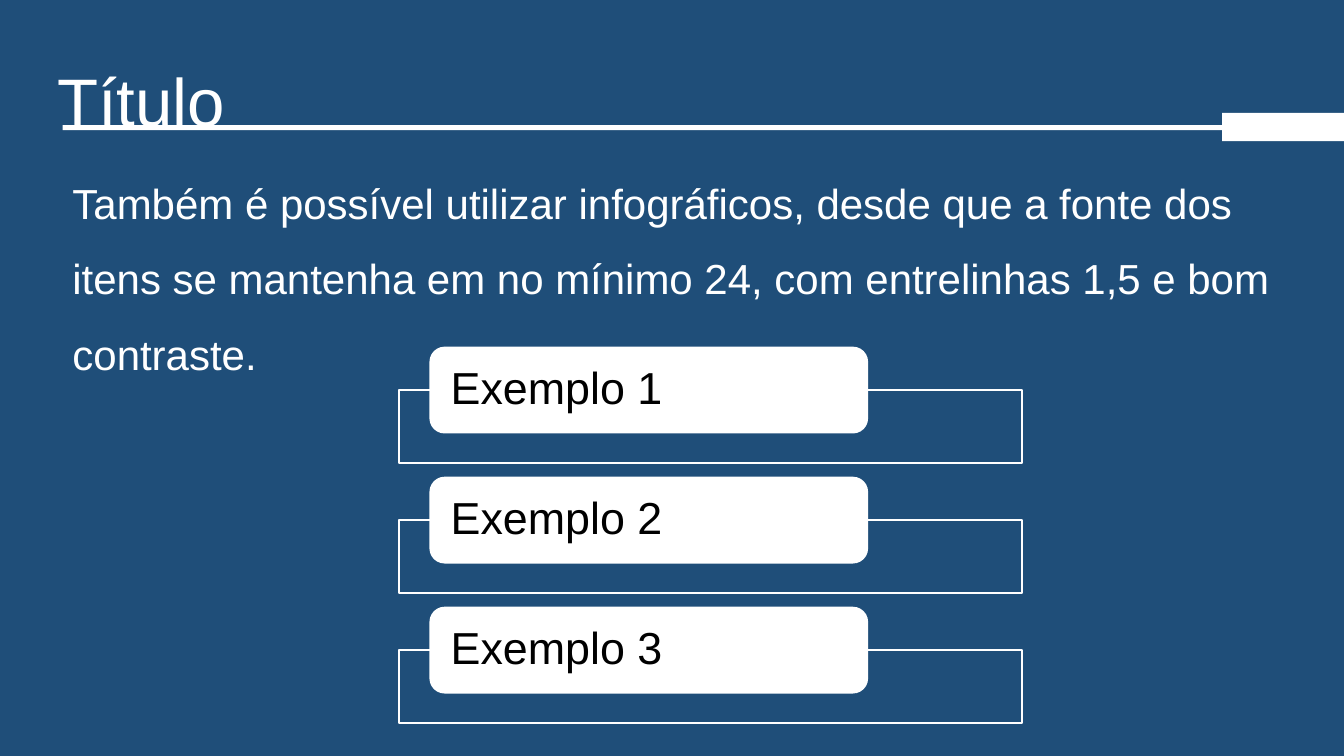
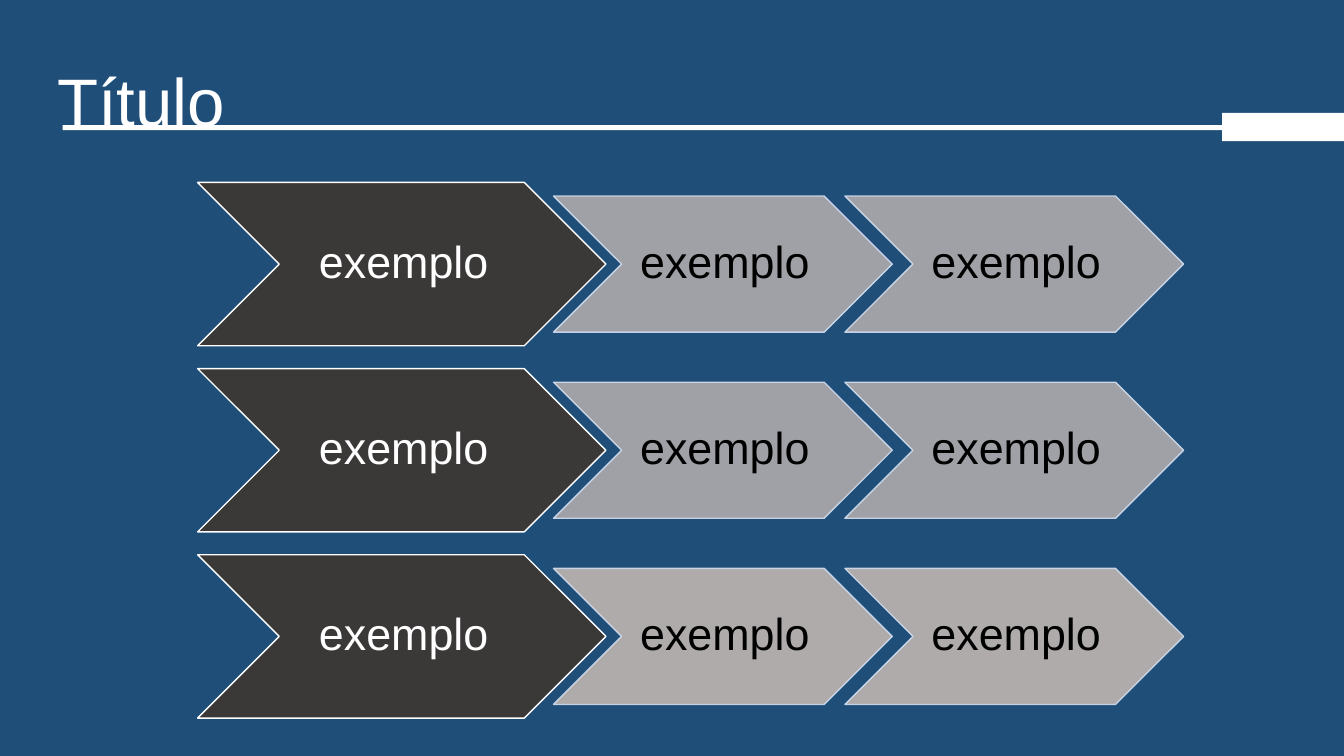
from dataclasses import dataclass, replace

import lxml.etree
import pptx
import pptx.dml.color
import pptx.enum.shapes
import pptx.enum.text
import pptx.oxml.ns
import pptx.presentation
import pptx.shapes.autoshape
import pptx.slide
import pptx.text.text
import pptx.util

Inches = pptx.util.Inches
Pt = pptx.util.Pt
KIND = pptx.enum.shapes.MSO_SHAPE
ALIGN = pptx.enum.text.PP_ALIGN
ANCHOR = pptx.enum.text.MSO_ANCHOR

WIDE, HIGH = 13.33, 7.5
FONT = "Arial"
NAVY = "1F4E79"
WHITE = "FFFFFF"
BLACK = "000000"
DARK = "3B3838"
GREY = "AFABAB"
PALE = "D2DEEF"


@dataclass(frozen=True)
class Box:
    left: float
    top: float
    width: float
    height: float


@dataclass(frozen=True)
class Look:
    kind: int
    fill: str | None = None
    line: str | None = None
    weight: float = 1
    fill_alpha: int = 100
    line_alpha: int = 100


@dataclass(frozen=True)
class Type:
    size: float
    ink: str
    space: float
    align: int = ALIGN.LEFT
    anchor: int = ANCHOR.TOP
    inset: tuple[float, float, float, float] = (0.1, 0.05, 0.1, 0.05)
    before: float = 0


HEAD = Type(48, WHITE, 1.5)
BODY = Type(30, WHITE, 1.5, before=10)
LABEL = Type(32, BLACK, 0.9, anchor=ANCHOR.MIDDLE, inset=(0.16, 0, 0.16, 0))
STEP = Type(32, BLACK, 0.9, ALIGN.CENTER, ANCHOR.MIDDLE, (0.04, 0.02, 0, 0.02))
LEAD = replace(STEP, ink=WHITE)

BAR = Look(KIND.RECTANGLE, WHITE)
FRAME = Look(KIND.RECTANGLE, line=WHITE, weight=1.5)
TAB = Look(KIND.ROUNDED_RECTANGLE, WHITE, WHITE, 1.5)
FIRST = Look(KIND.CHEVRON, DARK, WHITE)
NEXT = Look(KIND.CHEVRON, GREY, PALE, fill_alpha=90, line_alpha=90)
LAST = replace(NEXT, fill_alpha=100)


def paint(fill: pptx.dml.fill.FillFormat, color: str | None, alpha: int = 100) -> None:
    if color is None:
        fill.background()
        return
    fill.solid()
    fill.fore_color.rgb = pptx.dml.color.RGBColor.from_string(color)
    if alpha < 100:
        node = fill._xPr.find(".//" + pptx.oxml.ns.qn("a:srgbClr"))
        lxml.etree.SubElement(node, pptx.oxml.ns.qn("a:alpha"), val=str(alpha * 1000))


def write(frame: pptx.text.text.TextFrame, text: str, style: Type) -> None:
    frame.text = text
    frame.word_wrap = True
    frame.vertical_anchor = style.anchor
    (frame.margin_left, frame.margin_top,
     frame.margin_right, frame.margin_bottom) = map(Inches, style.inset)
    for para in frame.paragraphs:
        para.alignment = style.align
        para.line_spacing = style.space
        para.space_before = Pt(style.before)
        for run in para.runs:
            run.font.name = FONT
            run.font.size = Pt(style.size)
            paint(run.font.fill, style.ink)


def place(box: Box) -> tuple[int, int, int, int]:
    return Inches(box.left), Inches(box.top), Inches(box.width), Inches(box.height)


def draw(slide: pptx.slide.Slide, box: Box, look: Look) -> pptx.shapes.autoshape.Shape:
    shape = slide.shapes.add_shape(look.kind, *place(box))
    shape.shadow.inherit = False
    paint(shape.fill, look.fill, look.fill_alpha)
    paint(shape.line.fill, look.line, look.line_alpha)
    if look.line:
        shape.line.width = Pt(look.weight)
    return shape


def note(slide: pptx.slide.Slide, box: Box, text: str, style: Type) -> None:
    write(slide.shapes.add_textbox(*place(box)).text_frame, text, style)


def start(deck: pptx.presentation.Presentation) -> pptx.slide.Slide:
    slide = deck.slides.add_slide(deck.slide_layouts[6])
    paint(slide.background.fill, NAVY)
    return slide


def crown(slide: pptx.slide.Slide, title: str) -> None:
    note(slide, Box(0.47, 0.14, 10, 1.03), title, HEAD)
    draw(slide, Box(0.62, 1.24, 12.71, 0.05), BAR)
    draw(slide, Box(12.12, 1.12, 1.21, 0.28), BAR)


def add_list(deck: pptx.presentation.Presentation) -> None:
    slide = start(deck)
    note(slide, Box(0.62, 1.46, 12.47, 5.32),
         "Também é possível utilizar infográficos, desde que a fonte dos itens "
         "se mantenha em no mínimo 24, com entrelinhas 1,5 e bom contraste.", BODY)
    for row in range(3):
        top = 3.45 + row * 1.29
        draw(slide, Box(3.96, top + 0.42, 6.18, 0.72), FRAME)
        tab = draw(slide, Box(4.27, top, 4.33, 0.84), TAB)
        write(tab.text_frame, f"Exemplo {row + 1}", LABEL)
    crown(slide, "Título")


def add_steps(deck: pptx.presentation.Presentation) -> None:
    slide = start(deck)
    tall, short = 1.62, 1.35
    for row, look in enumerate((NEXT, NEXT, LAST)):
        top = 1.81 + row * tall * 1.14
        inner = top + (tall - short) / 2
        lead = draw(slide, Box(1.96, top, 4.05, tall), FIRST)
        write(lead.text_frame, "exemplo", LEAD)
        for col in range(2):
            step = draw(slide, Box(5.49 + col * 2.89, inner, 3.36, short), look)
            write(step.text_frame, "exemplo", STEP)
    crown(slide, "Título")


def main() -> None:
    deck = pptx.Presentation()
    deck.slide_width = Inches(WIDE)
    deck.slide_height = Inches(HIGH)
    add_list(deck)
    add_steps(deck)
    deck.save("out.pptx")


if __name__ == "__main__":
    main()
